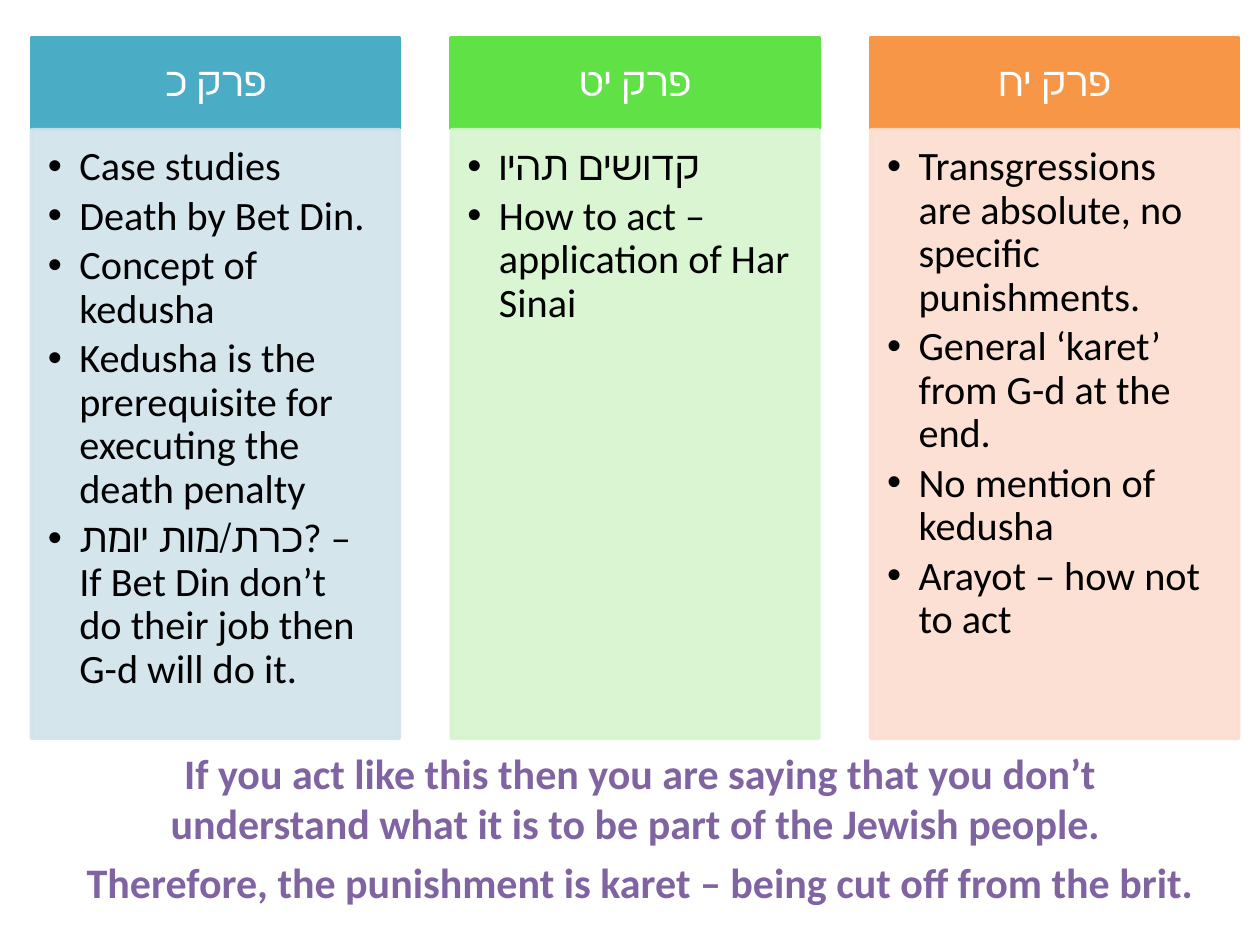
from lxml.etree import SubElement
from pptx import Presentation
from pptx.dml.color import RGBColor
from pptx.enum.shapes import MSO_SHAPE
from pptx.enum.text import MSO_ANCHOR, PP_ALIGN
from pptx.oxml.ns import qn
from pptx.util import Inches, Pt

MARGIN, TOP = 0.25, 0.3
COL_W, PITCH = 2.92, 3.33
HEAD_H, BODY_H = 0.72, 4.83

COLUMNS = [
    ("פרק כ", "4BACC6", "D0E3EA", [
        "Case studies",
        "Death by Bet Din.",
        "Concept of kedusha",
        "Kedusha is the prerequisite for executing the death penalty",
        "כרת/מות יומת? – If Bet Din don’t do their job then G-d will do it.",
    ]),
    ("פרק יט", "60E146", "D6F4CE", [
        "קדושים תהיו",
        "How to act – application of Har Sinai",
    ]),
    ("פרק יח", "F79646", "FCDDCF", [
        "Transgressions are absolute, no specific punishments.",
        "General ‘karet’ from G-d at the end.",
        "No mention of kedusha",
        "Arayot – how not to act",
    ]),
]
CONCLUSION = [
    "If you act like this then you are saying that you don’t understand "
    "what it is to be part of the Jewish people. ",
    "Therefore, the punishment is karet – being cut off from the brit.",
]


def paint(fmt, color, alpha=None):
    """Give a fill a solid colour, with opacity in percent if it is set."""
    fmt.solid()
    fmt.fore_color.rgb = RGBColor.from_string(color)
    if alpha:
        clr = fmt._xPr.find(qn("a:solidFill"))[0]
        SubElement(clr, qn("a:alpha"), val=str(alpha * 1000))


def write(tf, lines, size=23, color="000000", bold=False, align=PP_ALIGN.CENTER,
          spacing=None, after=None, bullet=False, rtl=False):
    tf.word_wrap = True
    for i, line in enumerate(lines):
        p = tf.add_paragraph() if i else tf.paragraphs[0]
        p.alignment, p.line_spacing = align, spacing
        if after is not None:
            p.space_after = Pt(after)
        pPr = p._p.get_or_add_pPr()
        indent = Inches(0.25) if bullet else 0
        pPr.set("marL", str(indent))
        pPr.set("indent", str(-indent))
        if rtl:
            pPr.set("rtl", "1")
        if bullet:
            SubElement(pPr, qn("a:buFont"), typeface="Arial")
            SubElement(pPr, qn("a:buChar"), char="•")
        else:
            SubElement(pPr, qn("a:buNone"))
        r = p.add_run()
        r.text = line
        r.font.name, r.font.size, r.font.bold = "Calibri", Pt(size), bold
        r.font.color.rgb = RGBColor.from_string(color)


def add_panel(s, box, color, insets, anchor, alpha=None):
    """Add a filled rectangle and return its text frame."""
    sp = s.shapes.add_shape(MSO_SHAPE.RECTANGLE, *map(Inches, box))
    sp.shadow.inherit = False
    paint(sp.fill, color, alpha)
    sp.line.width = Pt(2)
    paint(sp.line.fill, color, alpha)
    tf = sp.text_frame
    tf.margin_left, tf.margin_top, tf.margin_right, tf.margin_bottom = map(Inches, insets)
    tf.vertical_anchor = anchor
    return tf


def add_column(s, x, y, w, heading, dark, light, points):
    tf = add_panel(s, (x, y, w, HEAD_H), dark, (0.18, 0.1, 0.18, 0.1), MSO_ANCHOR.MIDDLE)
    write(tf, [heading], color="FFFFFF", spacing=0.9, rtl=True)
    tf = add_panel(s, (x, y + HEAD_H + 0.01, w, BODY_H), light,
                   (0.13, 0.13, 0.18, 0.2), MSO_ANCHOR.TOP, alpha=90)
    write(tf, points, align=PP_ALIGN.LEFT, spacing=0.9, after=3.5, bullet=True)


def add_conclusion(s, x, y, w, h):
    body = s.placeholders[1]
    body.left, body.top, body.width, body.height = map(Inches, (x, y, w, h))
    body.text_frame.vertical_anchor = MSO_ANCHOR.BOTTOM
    write(body.text_frame, CONCLUSION, size=24, color="8064A2", bold=True)


def main():
    prs = Presentation()
    prs.slide_width, prs.slide_height = Inches(10), Inches(7.5)
    s = prs.slides.add_slide(prs.slide_layouts[1])
    title = s.shapes.title._element
    title.getparent().remove(title)
    add_conclusion(s, 0.58, 5.92, 9, 1.33)
    for i, column in enumerate(COLUMNS):
        add_column(s, MARGIN + i * PITCH, TOP, COL_W, *column)
    prs.save("out.pptx")


if __name__ == "__main__":
    main()
